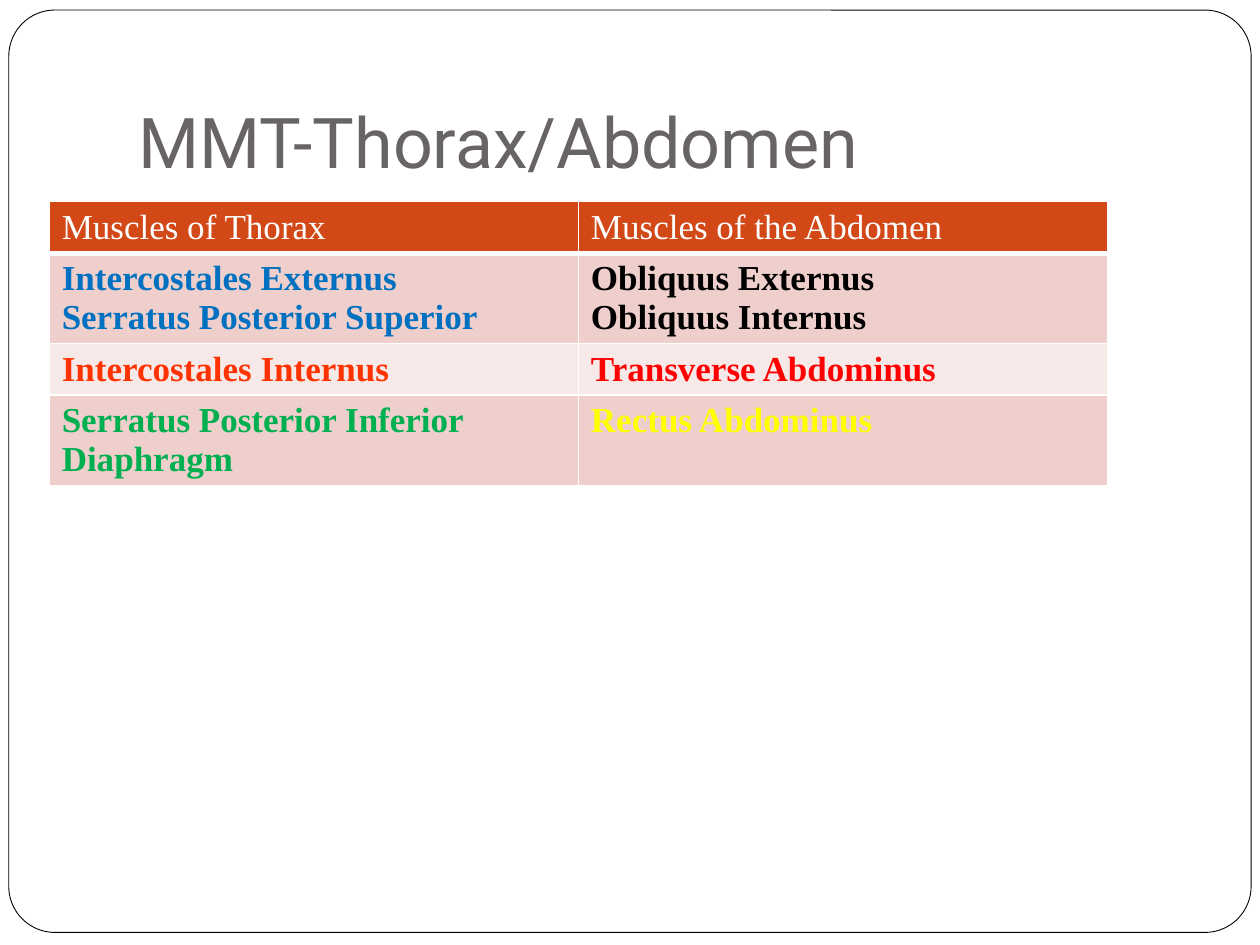
import dataclasses

import pptx
import pptx.dml.color
import pptx.enum.shapes
import pptx.enum.text
import pptx.oxml
import pptx.oxml.ns
import pptx.util

Inches, Pt = pptx.util.Inches, pptx.util.Pt
WHITE, HEADER, BAND, LIGHT_BAND = "FFFFFF", "D34817", "EFCFCC", "F7E9E8"


@dataclasses.dataclass
class Entry:
    lines: list[str]
    color: str
    bold: bool = True


@dataclasses.dataclass
class Row:
    fill: str
    entries: list[Entry]
    bottom: float = 1


ROWS = [
    Row(HEADER, [Entry(["Muscles of Thorax"], WHITE, False),
                 Entry(["Muscles of the Abdomen"], WHITE, False)], bottom=3),
    Row(BAND, [Entry(["Intercostales Externus", "Serratus Posterior Superior"], "0070C0"),
               Entry(["Obliquus Externus", "Obliquus Internus"], "000000")]),
    Row(LIGHT_BAND, [Entry(["Intercostales Internus"], "FF3300"),
                     Entry(["Transverse Abdominus"], "FF0000")]),
    Row(BAND, [Entry(["Serratus Posterior Inferior", "Diaphragm"], "00B050"),
               Entry(["Rectus Abdominus"], "FFFF00")]),
]


def rgb(color: str) -> pptx.dml.color.RGBColor:
    return pptx.dml.color.RGBColor.from_string(color)


def set_all(target, values: dict) -> None:
    for name, value in values.items():
        setattr(target, name, value)


def box(left: float, top: float, width: float, height: float) -> dict:
    return {"left": Inches(left), "top": Inches(top),
            "width": Inches(width), "height": Inches(height)}


def add_run(p, text: str, color: str, **font) -> None:
    r = p.add_run()
    r.text = text
    set_all(r.font, font)
    r.font.color.rgb = rgb(color)


def set_borders(cell, widths: dict[str, float]) -> None:
    tc_pr = cell._tc.get_or_add_tcPr()
    for i, (side, width) in enumerate(widths.items()):
        tc_pr.insert(i, pptx.oxml.parse_xml(
            f'<a:ln{side} {pptx.oxml.ns.nsdecls("a")} w="{Pt(width)}">'
            f'<a:solidFill><a:srgbClr val="{WHITE}"/></a:solidFill></a:ln{side}>'))


def fill_cell(cell, entry: Entry, fill: str, top: float, bottom: float) -> None:
    cell.fill.solid()
    cell.fill.fore_color.rgb = rgb(fill)
    set_borders(cell, {"L": 1, "R": 1, "T": top, "B": bottom})
    tf = cell.text_frame
    for i, line in enumerate(entry.lines):
        p = tf.add_paragraph() if i else tf.paragraphs[0]
        add_run(p, line, entry.color, name="Times New Roman", size=Pt(20), bold=entry.bold)


def add_frame(s) -> None:
    sp = s.shapes.add_shape(pptx.enum.shapes.MSO_SHAPE.ROUNDED_RECTANGLE,
                            **box(0.07, 0.08, 9.86, 7.32))
    sp.adjustments[0] = 0.05
    sp.shadow.inherit = False
    sp.fill.solid()
    sp.fill.fore_color.rgb = rgb(WHITE)
    sp.line.color.rgb = rgb("000000")
    sp.line.width = Pt(0.5)
    s.shapes._spTree.insert(2, sp._element)  # behind the title


def add_title(s, text: str) -> None:
    sp = s.shapes.title
    set_all(sp, box(1, 0.3, 8.5, 1.25))
    tf = sp.text_frame
    set_all(tf, {"vertical_anchor": pptx.enum.text.MSO_ANCHOR.BOTTOM, "word_wrap": True,
                 "auto_size": pptx.enum.text.MSO_AUTO_SIZE.NONE,
                 "margin_left": Inches(0.1), "margin_right": Inches(0.1),
                 "margin_top": Inches(0.05), "margin_bottom": Inches(0.1)})
    p = tf.paragraphs[0]
    p.alignment = pptx.enum.text.PP_ALIGN.LEFT
    add_run(p, text, "696464", name="Roboto", size=Pt(40))


def add_muscle_table(s, rows: list[Row]) -> None:
    table = s.shapes.add_table(len(rows), len(rows[0].entries),
                               **box(0.39, 1.6, 8.4, 0.41 * len(rows))).table
    top = 1
    for i, row in enumerate(rows):
        for j, entry in enumerate(row.entries):
            fill_cell(table.cell(i, j), entry, row.fill, top, row.bottom)
        top = row.bottom


def main() -> None:
    prs = pptx.Presentation()
    set_all(prs, {"slide_width": Inches(10), "slide_height": Inches(7.5)})
    s = prs.slides.add_slide(prs.slide_layouts[5])  # title only
    add_frame(s)
    add_title(s, "MMT-Thorax/Abdomen")
    add_muscle_table(s, ROWS)
    prs.save("out.pptx")


if __name__ == "__main__":
    main()
